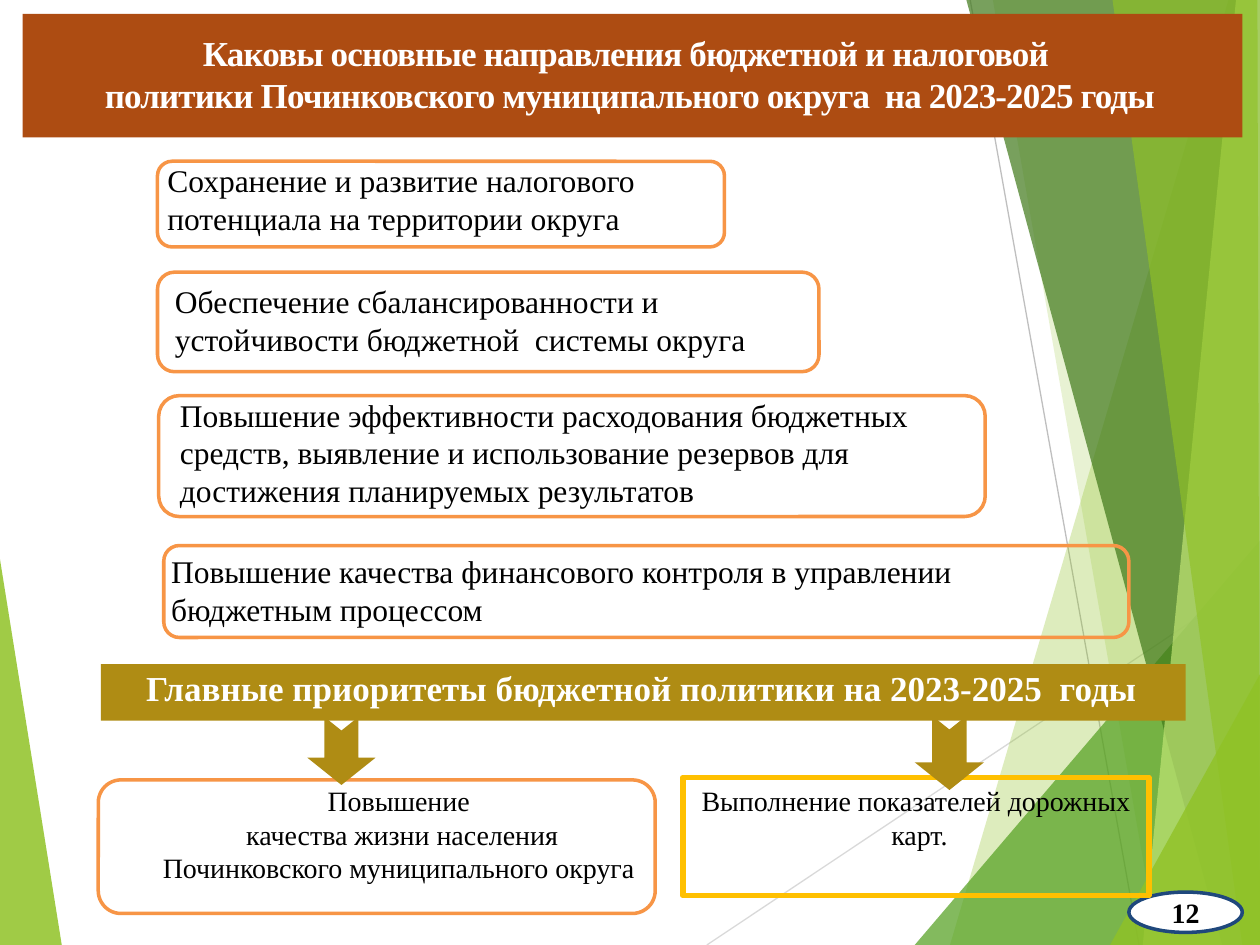
from dataclasses import dataclass

from lxml import etree
from pptx import Presentation
from pptx.dml.color import RGBColor
from pptx.enum.shapes import MSO_CONNECTOR, MSO_SHAPE
from pptx.enum.text import MSO_ANCHOR, MSO_AUTO_SIZE, PP_ALIGN
from pptx.oxml.ns import qn
from pptx.util import Emu, Pt

PX = 9144
RECT, ROUNDED = MSO_SHAPE.RECTANGLE, MSO_SHAPE.ROUNDED_RECTANGLE
OVAL, ARROW = MSO_SHAPE.OVAL, MSO_SHAPE.NOTCHED_RIGHT_ARROW
STRAIGHT = MSO_CONNECTOR.STRAIGHT
TOP, MIDDLE = MSO_ANCHOR.TOP, MSO_ANCHOR.MIDDLE
LEFT, CENTER = PP_ALIGN.LEFT, PP_ALIGN.CENTER


@dataclass(frozen=True)
class Theme:
    font: str = "Times New Roman"
    white: str = "FFFFFF"
    black: str = "000000"
    header: str = "AD4C12"
    gold: str = "AF8C14"
    amber: str = "FFC000"
    orange: str = "F79546"
    navy: str = "1F487C"
    lime: str = "90C226"
    pale: str = "C0E474"
    green: str = "54A021"
    dark: str = "3F7819"
    grey: str = "BFBFBF"
    light_grey: str = "D9D9D9"
    heading: int = 20
    body: int = 18
    small: int = 16


class Deck:
    """Draws styled elements on the current slide, with lengths in px."""

    def __init__(self, theme, width, height):
        self.t = theme
        self.prs = Presentation()
        self.prs.slide_width, self.prs.slide_height = self.emu(width, height)
        self.s = None

    def emu(self, *lengths):
        return [Emu(n * PX) for n in lengths]

    def add_slide(self):
        self.s = self.prs.slides.add_slide(self.prs.slide_layouts[5])

    def paint(self, sp, fill=None, line=None, weight=2):
        sp.shadow.inherit = False
        if fill:
            sp.fill.solid()
            sp.fill.fore_color.rgb = RGBColor.from_string(fill)
        else:
            sp.fill.background()
        if line:
            sp.line.color.rgb = RGBColor.from_string(line)
            sp.line.width = Pt(weight)
        else:
            sp.line.fill.background()

    def set_text(self, sp, paragraphs, size, color, bold=False, align=LEFT,
                 anchor=TOP, insets=(10, 5, 10, 5), spacing=None):
        tf = sp.text_frame
        tf.word_wrap = True
        tf.auto_size = MSO_AUTO_SIZE.NONE
        tf.vertical_anchor = anchor
        (tf.margin_left, tf.margin_top,
         tf.margin_right, tf.margin_bottom) = self.emu(*insets)
        for i, lines in enumerate(paragraphs):
            p = tf.add_paragraph() if i else tf.paragraphs[0]
            p.alignment = align
            p.space_before = Pt(0)
            for j, text in enumerate(lines.split("\n")):
                if j:
                    p.add_line_break()
                r = p.add_run()
                r.text = text
                r.font.name, r.font.size, r.font.bold = self.t.font, Pt(size), bold
                r.font.color.rgb = RGBColor.from_string(color)
                if spacing is not None:
                    r.font._element.set("spc", str(spacing))

    def facet(self, color, opacity, points):
        builder = self.s.shapes.build_freeform(*points[0], scale=PX)
        builder.add_line_segments(points[1:], close=True)
        sp = builder.convert_to_shape()
        self.paint(sp, color)
        rgb = sp._element.spPr.find(qn("a:solidFill"))[0]
        etree.SubElement(rgb, qn("a:alpha")).set("val", str(opacity * 1000))

    def line(self, color, *ends):
        cxn = self.s.shapes.add_connector(STRAIGHT, *self.emu(*ends))
        cxn.line.color.rgb = RGBColor.from_string(color)
        cxn.line.width = Pt(0.75)
        etree.SubElement(cxn._element.spPr, qn("a:effectLst"))

    def shape(self, kind, box, **style):
        sp = self.s.shapes.add_shape(kind, *self.emu(*box))
        self.paint(sp, **style)
        return sp

    def frame(self, box):
        sp = self.shape(ROUNDED, box, line=self.t.orange)
        sp.adjustments[0] = 0.17

    def text(self, box, paragraphs, size, **style):
        sp = self.s.shapes.add_textbox(*self.emu(*box))
        self.set_text(sp, paragraphs, size, self.t.black, **style)

    def title(self, box, text):
        sp = self.s.shapes.title
        sp.left, sp.top, sp.width, sp.height = self.emu(*box)
        self.set_text(sp, [text], self.t.heading, self.t.white, bold=True,
                      align=CENTER, insets=(0, 0, 0, 0), spacing=-50)
        self.s.shapes[-1]._element.addnext(sp._element)

    def down_arrow(self, box):
        sp = self.shape(ARROW, box, fill=self.t.gold)
        sp.rotation = 90
        sp.adjustments[0], sp.adjustments[1] = 0.5, 0.4


def main():
    t = Theme()
    d = Deck(t, 1000, 750)
    d.add_slide()

    d.facet(t.lime, 85, [(0, 444), (49, 750), (0, 750)])
    d.line(t.light_grey, 561, 750, 1000, 457)
    d.line(t.grey, 770, 0, 904, 750)
    for color, opacity, points in (
        (t.lime, 30, [(975, 0), (754, 750), (1000, 750), (1000, 0)]),
        (t.lime, 20, [(788, 0), (919, 750), (1000, 750), (1000, 0)]),
        (t.green, 72, [(726, 750), (1000, 429), (1000, 750)]),
        (t.dark, 70, [(767, 0), (970, 750), (1000, 750), (1000, 0)]),
        (t.pale, 70, [(981, 0), (907, 750), (1000, 750), (1000, 0)]),
        (t.lime, 65, [(883, 0), (986, 750), (1000, 750), (998, 0)]),
        (t.lime, 80, [(881, 750), (1000, 535), (1000, 750)]),
    ):
        d.facet(color, opacity, points)

    d.shape(RECT, (18, 11, 968, 98), fill=t.header)
    d.title((-49, 25, 1091, 67),
            "Каковы основные направления бюджетной и налоговой\n"
            " политики Починковского муниципального округа  на 2023-2025 годы")

    directions = (
        ((125, 128, 450, 68), (123, 123, 500, 71),
         "Сохранение и развитие налогового потенциала на территории округа"),
        ((125, 216, 525, 79), (129, 219, 529, 71),
         "Обеспечение сбалансированности и устойчивости бюджетной  системы округа"),
        ((126, 314, 656, 96), (133, 309, 642, 100),
         "Повышение эффективности расходования бюджетных средств, выявление "
         "и использование резервов для достижения планируемых результатов"),
        ((130, 433, 766, 73), (126, 433, 757, 71),
         "Повышение качества финансового контроля в управлении бюджетным процессом"),
    )
    for frame, box, text in directions:
        d.frame(frame)
        d.text(box, [text], t.body)

    number = d.shape(OVAL, (896, 708, 90, 32), fill=t.white, line=t.navy)
    d.set_text(number, ["12"], t.small, t.black, bold=True, align=CENTER,
               anchor=MIDDLE, insets=(0, 0, 0, 0))

    banner = d.shape(RECT, (80, 527, 861, 45), fill=t.gold)
    d.set_text(banner, ["Главные приоритеты бюджетной политики на 2023-2025  годы"],
               t.heading, t.white, bold=True, insets=(36, 2, 0, 0))

    d.frame((78, 619, 442, 106))
    d.down_arrow((244, 569, 54, 54))
    goal = d.shape(RECT, (542, 617, 370, 94), line=t.amber, weight=3)
    d.set_text(goal, ["Выполнение показателей дорожных", " карт."],
               t.small, t.black, align=CENTER)
    d.text((108, 617, 417, 121),
           ["Повышение",
            " качества жизни населения Починковского муниципального округа"],
           t.small, align=CENTER)
    d.down_arrow((724, 570, 59, 55))

    d.prs.save("out.pptx")


if __name__ == "__main__":
    main()
